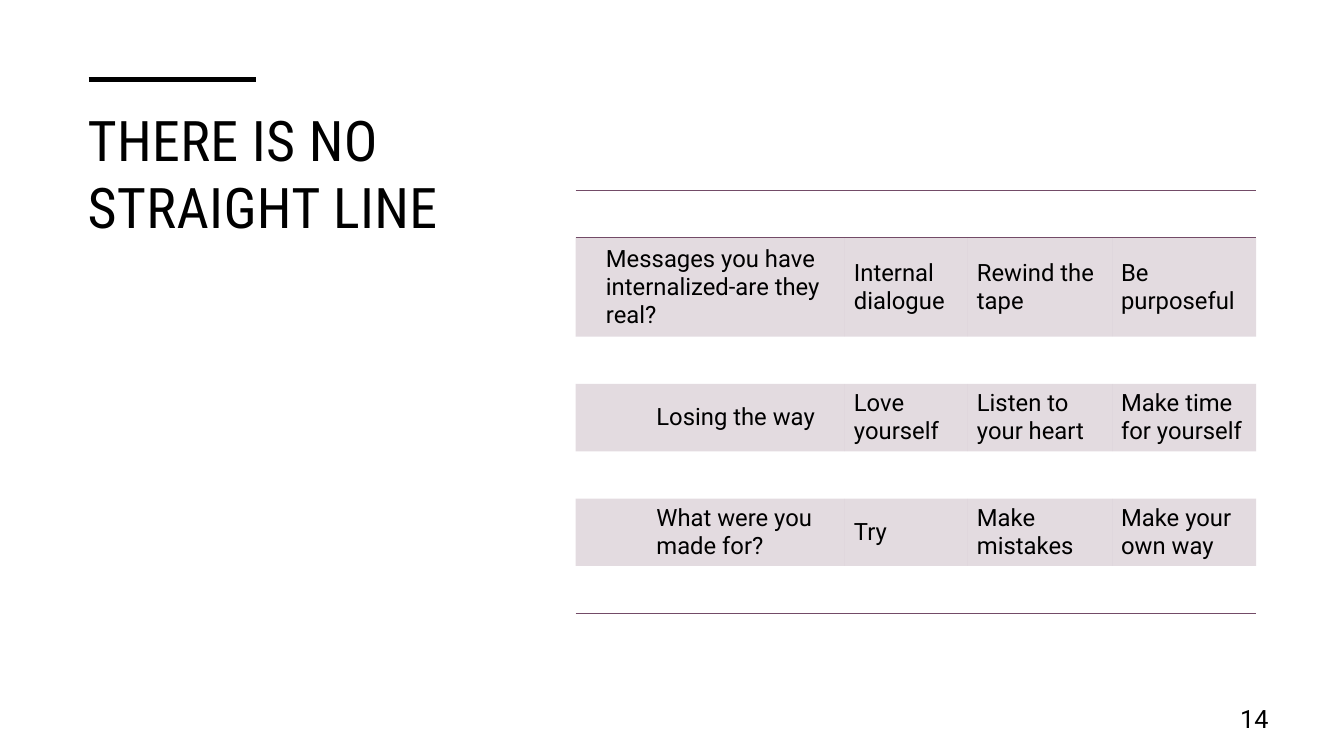
from dataclasses import dataclass

from lxml.etree import SubElement
from pptx import Presentation
from pptx.dml.color import RGBColor
from pptx.enum.shapes import MSO_CONNECTOR
from pptx.enum.text import MSO_ANCHOR, PP_ALIGN
from pptx.oxml import parse_xml
from pptx.oxml.ns import nsdecls, qn
from pptx.slide import Slide
from pptx.table import Table, _Cell
from pptx.text.text import TextFrame, _Run
from pptx.util import Inches, Pt

COLORS = {"ink": "000000", "plum": "734B67"}
BODY_FONT = "Roboto"
TITLE_FONT = "Roboto Condensed"
NO_TABLE_STYLE = "{2D5ABB26-0587-4C30-8999-92F81FD0307C}"
TINT_PERCENT = 20
COLUMN_WIDTHS = (2.67, 1.22, 1.43, 1.43)
GAP_HEIGHT = 0.47


@dataclass(frozen=True)
class MessageRow:
    texts: tuple[str, ...]
    height: float
    indent: float = 0


MESSAGE_ROWS = (
    MessageRow(("Messages you have internalized-are they real?", "Internal dialogue",
                "Rewind the tape", "Be purposeful"), 0.98),
    MessageRow(("Losing the way", "Love yourself", "Listen to your heart",
                "Make time for yourself"), 0.65, 0.5),
    MessageRow(("What were you made for?", "Try", "Make mistakes",
                "Make your own way"), 0.65, 0.5),
)


def add_run(text_frame: TextFrame, text: str, size: float, font: str) -> _Run:
    run = text_frame.paragraphs[0].add_run()
    run.text = text
    run.font.size = Pt(size)
    run.font.name = font
    run.font.color.rgb = RGBColor.from_string(COLORS["ink"])
    return run


def add_text_box(slide: Slide, left: float, top: float, width: float, height: float) -> TextFrame:
    shape = slide.shapes.add_textbox(Inches(left), Inches(top), Inches(width), Inches(height))
    shape.text_frame.word_wrap = True
    return shape.text_frame


def add_accent_line(slide: Slide) -> None:
    line = slide.shapes.add_connector(
        MSO_CONNECTOR.STRAIGHT, Inches(0.88), Inches(0.79), Inches(2.54), Inches(0.79))
    line.line.width = Pt(3.5)
    line.line.color.rgb = RGBColor.from_string(COLORS["ink"])
    SubElement(line._element.spPr, qn("a:effectLst"))


def set_border(cell: _Cell, side: str) -> None:
    border = parse_xml(
        f'<a:ln{side} {nsdecls("a")} w="{Pt(1)}"><a:solidFill>'
        f'<a:srgbClr val="{COLORS["plum"]}"/></a:solidFill></a:ln{side}>')
    cell._tc.get_or_add_tcPr().insert(0, border)


def fill_message_row(table: Table, row_index: int, message: MessageRow) -> None:
    table.rows[row_index].height = Inches(message.height)
    for column_index, text in enumerate(message.texts):
        cell = table.cell(row_index, column_index)
        first = column_index == 0
        cell.vertical_anchor = MSO_ANCHOR.MIDDLE
        cell.margin_left = Inches(0.3 if first else 0.09)
        cell.margin_right = Inches(0.09)
        cell.margin_top = cell.margin_bottom = Inches(0.05)
        cell.fill.solid()
        cell.fill.fore_color.rgb = RGBColor.from_string(COLORS["plum"])
        color = cell._tc.tcPr.find(".//" + qn("a:srgbClr"))
        SubElement(color, qn("a:alpha"), val=str(TINT_PERCENT * 1000))
        add_run(cell.text_frame, text, 17, BODY_FONT)
        if first and message.indent:
            paragraph = cell.text_frame.paragraphs[0]
            paragraph.level = 1
            properties = paragraph._p.get_or_add_pPr()
            properties.set("marL", str(Inches(message.indent)))
            properties.set("indent", "0")


def add_message_table(slide: Slide) -> None:
    row_count = 2 * len(MESSAGE_ROWS) + 1
    height = sum(row.height for row in MESSAGE_ROWS) + GAP_HEIGHT * (len(MESSAGE_ROWS) + 1)
    table = slide.shapes.add_table(
        row_count, len(COLUMN_WIDTHS), Inches(5.71), Inches(1.89),
        Inches(sum(COLUMN_WIDTHS)), Inches(height)).table
    table.first_row = table.horz_banding = False
    table._tbl.tblPr.find(qn("a:tableStyleId")).text = NO_TABLE_STYLE
    for column, width in zip(table.columns, COLUMN_WIDTHS):
        column.width = Inches(width)

    # Empty rows alternate with tinted message rows
    for row_index in range(0, row_count, 2):
        table.rows[row_index].height = Inches(GAP_HEIGHT)
        for cell in table.rows[row_index].cells:
            cell.fill.background()
    for position, message in enumerate(MESSAGE_ROWS):
        fill_message_row(table, 2 * position + 1, message)

    # Rules around the header and under the table
    for column_index in range(len(COLUMN_WIDTHS)):
        header = table.cell(0, column_index)
        set_border(header, "B")
        set_border(header, "T")
        set_border(table.cell(row_count - 1, column_index), "B")


def main() -> None:
    presentation = Presentation()
    presentation.slide_width = Inches(13.33)
    presentation.slide_height = Inches(7.5)
    slide = presentation.slides.add_slide(presentation.slide_layouts[6])

    # Title
    add_accent_line(slide)
    title = add_text_box(slide, 0.77, 1, 4.28, 4.35)
    title_run = add_run(title, "THERE IS NO STRAIGHT LINE", 40, TITLE_FONT)
    title_run.font._element.set("spc", "30")

    # Slide number
    number = add_text_box(slide, 11.94, 6.95, 0.74, 0.4)
    number.vertical_anchor = MSO_ANCHOR.MIDDLE
    paragraph = number.paragraphs[0]
    paragraph.alignment = PP_ALIGN.RIGHT
    paragraph.line_spacing = 0.9
    paragraph.space_after = Pt(6)
    add_run(number, "14", 18, BODY_FONT)

    # Table of messages
    add_message_table(slide)
    presentation.save("out.pptx")


if __name__ == "__main__":
    main()
